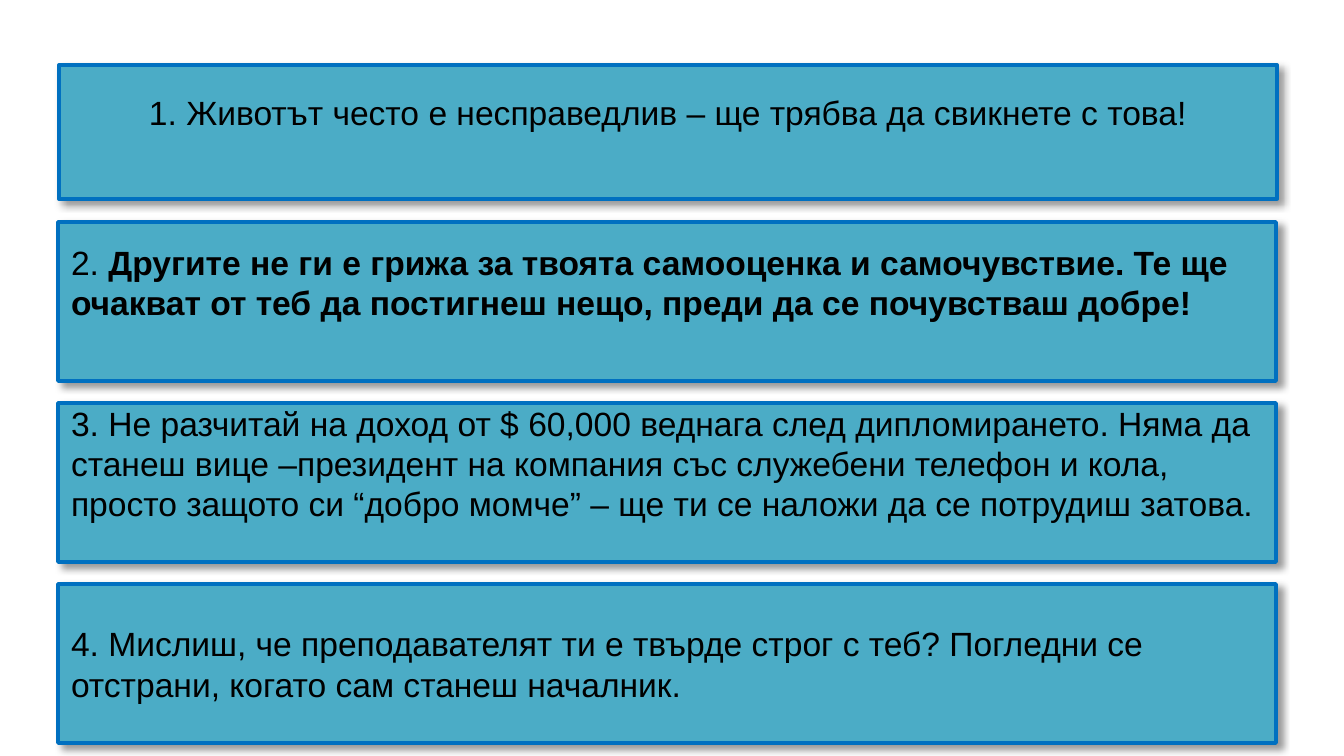
import pptx
import pptx.util
import pptx.dml.color
import pptx.enum.shapes
import pptx.enum.text
from lxml import etree

COLORS = {"fill": "4BACC6", "line": "0070C0", "text": "000000", "shade": "000000"}
FONT = "Arial"
PX = 914400 / 134.4
WIDTH, HEIGHT = 1344, 756
LEFT, WIDE = 58, 1218
TOP, TALL, STEP = 222, 159, 181
SIDE, EDGE, LINE = 13, 7, 39  # insets, and one line of text

# number, text, bold, centred, lines kept free below
FIRST = ("1.", " Животът често е несправедлив – ще трябва да свикнете с това!", False, True, 1)
RULES = [
    ("2.", " Другите не ги е грижа за твоята самооценка и самочувствие. Те ще "
           "очакват от теб да постигнеш нещо, преди да се почувстваш добре!", True, False, 1),
    ("3.", " Не разчитай на доход от $ 60,000 веднага след дипломирането. Няма да "
           "станеш вице –президент на компания със служебени телефон и кола, просто "
           "защото си “добро момче” – ще ти се наложи да се потрудиш затова.", False, False, 1),
    ("4.", " Мислиш, че преподавателят ти е твърде строг с теб? Погледни се "
           "отстрани, когато сам станеш началник.", False, False, 0),
]


def emu(px):
    return pptx.util.Emu(round(px * PX))


def color(name):
    return pptx.dml.color.RGBColor.from_string(COLORS[name])


def shade(box):
    """Give the box a soft shadow to the lower right."""
    box.shadow.inherit = False
    tag = "{http://schemas.openxmlformats.org/drawingml/2006/main}"
    effects = box.fill._xPr.find(tag + "effectLst")
    outer = etree.SubElement(effects, tag + "outerShdw", blurRad="50800",
                             dist="38100", dir="2700000", algn="tl", rotWithShape="0")
    tint = etree.SubElement(outer, tag + "srgbClr", val=COLORS["shade"])
    etree.SubElement(tint, tag + "alpha", val="40000")


def add_rule(slide, rule, left, top, tall):
    number, text, bold, centred, free = rule
    box = slide.shapes.add_shape(pptx.enum.shapes.MSO_SHAPE.RECTANGLE,
                                 emu(left), emu(top), emu(WIDE), emu(tall))
    box.fill.solid()
    box.fill.fore_color.rgb = color("fill")
    box.line.color.rgb = color("line")
    box.line.width = pptx.util.Pt(2)
    shade(box)

    frame = box.text_frame
    frame.word_wrap = True
    frame.vertical_anchor = pptx.enum.text.MSO_ANCHOR.MIDDLE
    frame.margin_left = frame.margin_right = emu(SIDE)
    frame.margin_top = emu(EDGE)
    frame.margin_bottom = emu(EDGE + free * LINE)
    frame.text = number
    para = frame.paragraphs[0]
    align = pptx.enum.text.PP_ALIGN
    para.alignment = align.CENTER if centred else align.LEFT
    para.add_run().text = text
    for run in para.runs:
        run.font.name = FONT
        run.font.size = pptx.util.Pt(18)
        run.font.color.rgb = color("text")
    para.runs[1].font.bold = bold


def main():
    deck = pptx.Presentation()
    deck.slide_width, deck.slide_height = emu(WIDTH), emu(HEIGHT)
    slide = deck.slides.add_slide(deck.slide_layouts[6])
    add_rule(slide, FIRST, LEFT + 1, 65, 134)
    for i, rule in enumerate(RULES):
        add_rule(slide, rule, LEFT, TOP + i * STEP, TALL)
    deck.save("out.pptx")


if __name__ == "__main__":
    main()
